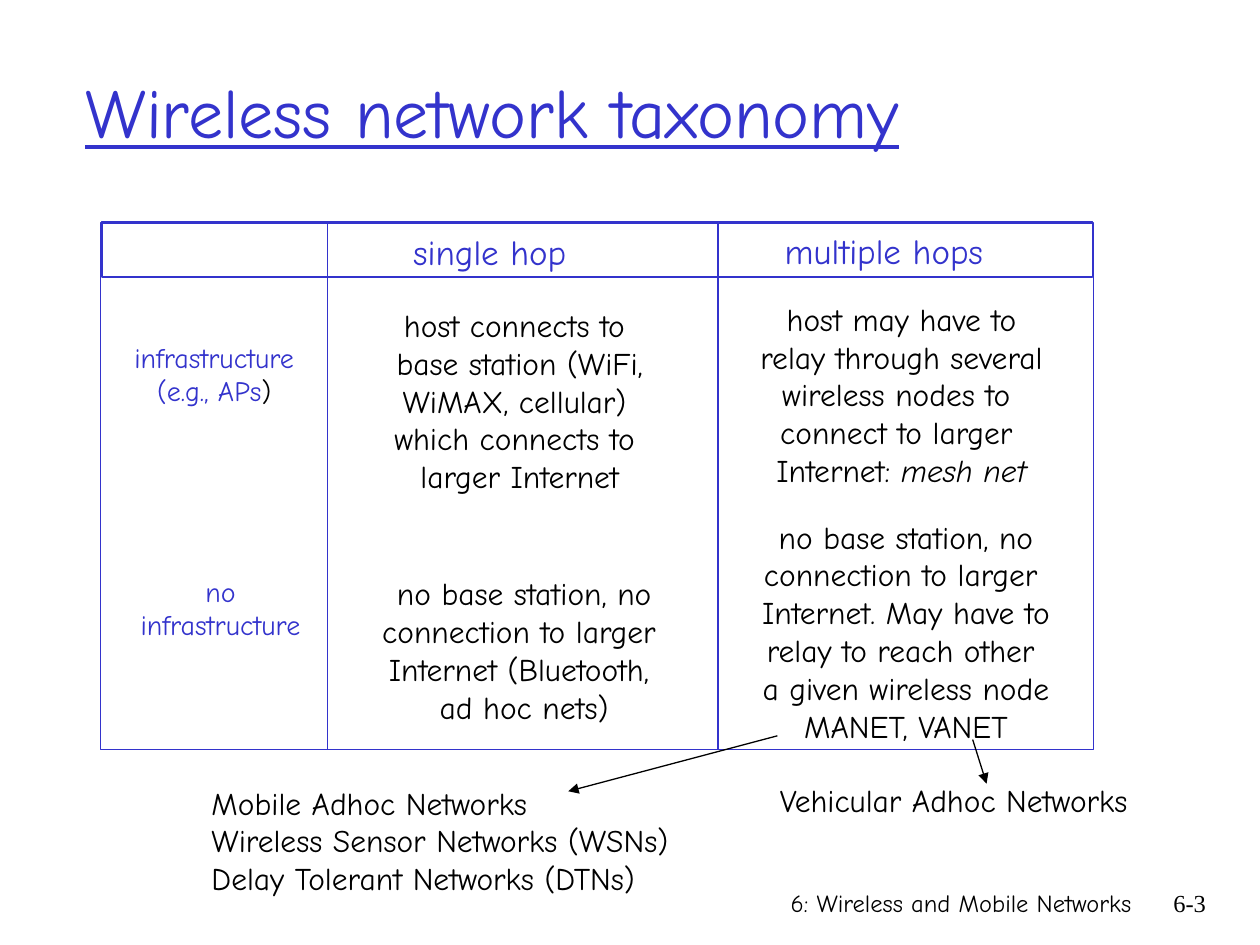
from dataclasses import dataclass

from lxml import etree
from pptx import Presentation
from pptx.dml.color import RGBColor
from pptx.enum import shapes, text
from pptx.oxml import ns
from pptx.util import Inches, Pt

BLUE, BLACK = "3333CC", "000000"
LEFT, CENTER, RIGHT = text.PP_ALIGN.LEFT, text.PP_ALIGN.CENTER, text.PP_ALIGN.RIGHT


@dataclass
class Run:
    text: str
    color: str | None = None
    italic: bool | None = None


@dataclass
class Label:
    x: float
    y: float
    w: float
    h: float
    lines: list[str | list[Run]]
    size: int = 18
    color: str = BLACK
    align: text.PP_ALIGN = CENTER
    font: str = "Comic Neue"
    fit: bool = True
    underline: bool | None = None
    anchor: text.MSO_ANCHOR = text.MSO_ANCHOR.TOP


@dataclass
class Box:
    x: float
    y: float
    w: float
    h: float


@dataclass
class Arrow:
    x1: float
    y1: float
    x2: float
    y2: float


def rgb(color: str) -> RGBColor:
    return RGBColor.from_string(color)


def add_label(s, label: Label) -> None:
    sp = s.shapes.add_textbox(*map(Inches, (label.x, label.y, label.w, label.h)))
    tf = sp.text_frame
    tf.word_wrap = not label.fit
    if label.fit:
        tf.auto_size = text.MSO_AUTO_SIZE.SHAPE_TO_FIT_TEXT
    tf.vertical_anchor = label.anchor
    for i, line in enumerate(label.lines):
        p = tf.add_paragraph() if i else tf.paragraphs[0]
        p.alignment = label.align
        p.font.name = label.font
        p.font.size = Pt(label.size)
        p.font.underline = label.underline
        p.font.color.rgb = rgb(label.color)
        for part in [Run(line)] if isinstance(line, str) else line:
            r = p.add_run()
            r.text = part.text
            r.font.italic = part.italic
            if part.color:
                r.font.color.rgb = rgb(part.color)


def add_box(s, box: Box) -> None:
    sp = s.shapes.add_shape(
        shapes.MSO_SHAPE.RECTANGLE, *map(Inches, (box.x, box.y, box.w, box.h))
    )
    sp.shadow.inherit = False
    sp.fill.background()
    sp.line.color.rgb = rgb(BLUE)
    sp.line.width = Pt(0.75)


def add_arrow(s, arrow: Arrow) -> None:
    sp = s.shapes.add_connector(
        shapes.MSO_CONNECTOR.STRAIGHT,
        *map(Inches, (arrow.x1, arrow.y1, arrow.x2, arrow.y2)),
    )
    sp.line.color.rgb = rgb(BLACK)
    sp.line.width = Pt(0.75)
    etree.SubElement(sp.line._get_or_add_ln(), ns.qn("a:tailEnd"), type="triangle")
    etree.SubElement(sp._element.spPr, ns.qn("a:effectLst"))


PAGE_LABELS = [
    Label(4.86, 7, 4.22, 0.5, ["6: Wireless and Mobile Networks"], 14,
          align=RIGHT, fit=False),
    Label(8.93, 7, 0.74, 0.5, ["6-3"], 14, align=RIGHT,
          font="Times New Roman", fit=False),
    Label(0.58, 0.25, 8.5, 1.25, ["Wireless network taxonomy"], 40, BLUE, LEFT,
          fit=False, underline=True, anchor=text.MSO_ANCHOR.MIDDLE),
]

HEADINGS = [
    Label(3.18, 1.78, 1.48, 0.43, ["single hop"], 20, BLUE, LEFT),
    Label(6.13, 1.77, 1.9, 0.43, ["multiple hops"], 20, BLUE, LEFT),
    Label(0.84, 2.65, 1.72, 0.64,
          ["infrastructure", [Run("(e.g., APs"), Run(")", BLACK)]], 16, BLUE),
    Label(0.89, 4.51, 1.72, 0.64, ["no", "infrastructure"], 16, BLUE),
]

COLUMN_EDGES = [0.8, 2.6, 5.7, 8.68]
GRID = [Box(0.81, 1.76, 7.86, 0.44)] + [
    Box(x, 1.77, end - x, 4.18) for x, end in zip(COLUMN_EDGES, COLUMN_EDGES[1:])
]

CELLS = [
    Label(2.92, 2.38, 2.41, 1.6,
          ["host connects to ", "base station (WiFi,", "WiMAX, cellular) ",
           "which connects to ", "larger Internet"]),
    Label(2.82, 4.51, 2.68, 1.3,
          ["no base station, no", "connection to larger ",
           "Internet (Bluetooth, ", "ad hoc nets)"]),
    Label(5.81, 2.33, 2.69, 1.6,
          ["host may have to", "relay through several", "wireless nodes to ",
           "connect to larger ", [Run("Internet: "), Run("mesh net", italic=True)]]),
    Label(5.8, 4.06, 2.78, 1.9,
          ["no base station, no", "connection to larger ", "Internet. May have to",
           "relay to reach other ", "a given wireless node", "MANET, VANET"]),
]

EXPANSIONS = [
    Label(1.58, 6.17, 4.39, 1.01,
          ["Mobile Adhoc Networks", "Wireless Sensor Networks (WSNs)",
           "Delay Tolerant Networks (DTNs)"], align=LEFT),
    Label(6.09, 6.15, 3.31, 0.4, ["Vehicular Adhoc Networks"], align=LEFT),
]

ARROWS = [Arrow(6.17, 5.84, 4.51, 6.28), Arrow(7.72, 5.87, 7.83, 6.22)]


def main() -> None:
    prs = Presentation()
    prs.slide_width, prs.slide_height = Inches(10), Inches(7.5)
    s = prs.slides.add_slide(prs.slide_layouts[6])
    for label in PAGE_LABELS + HEADINGS:
        add_label(s, label)
    for box in GRID:
        add_box(s, box)
    for label in CELLS + EXPANSIONS:
        add_label(s, label)
    for arrow in ARROWS:
        add_arrow(s, arrow)
    prs.save("out.pptx")


if __name__ == "__main__":
    main()
